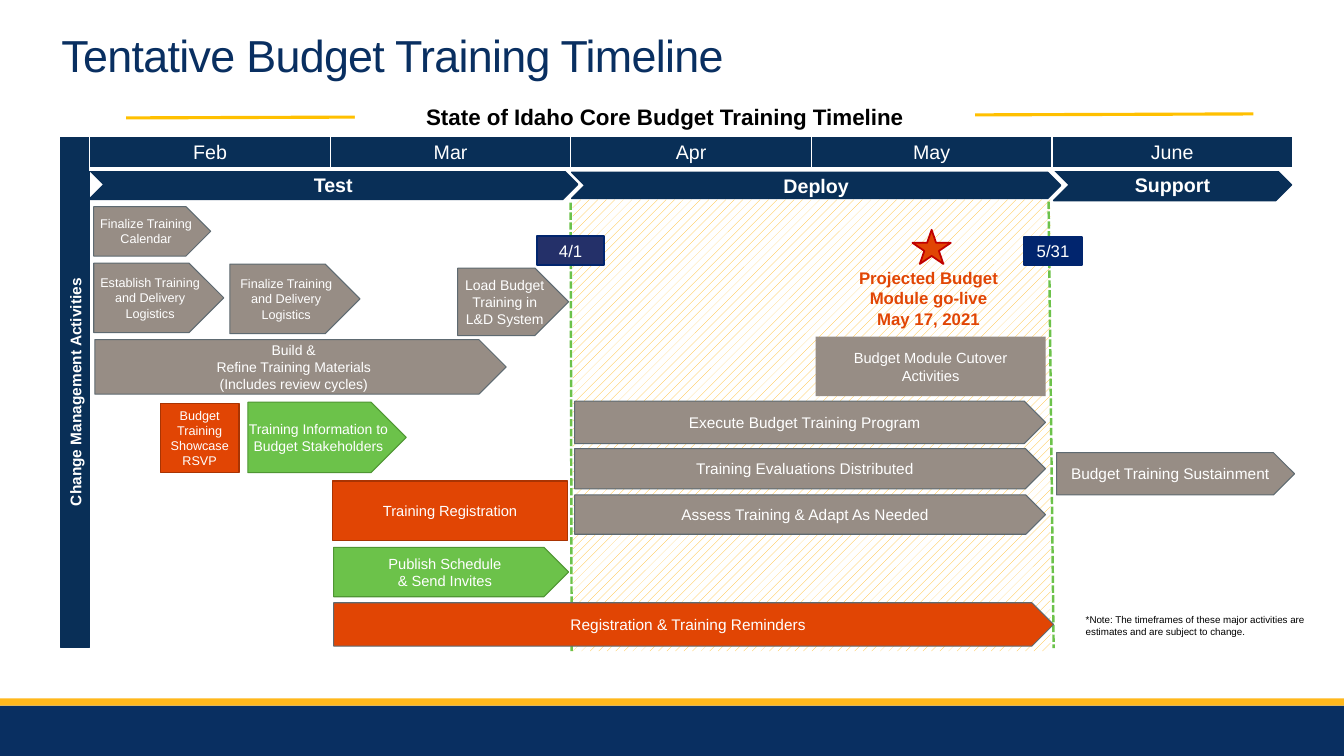
from lxml import etree
from pptx import Presentation
from pptx import util as u
from pptx.dml.color import RGBColor
from pptx.enum import dml, shapes, text
from pptx.oxml.ns import qn

SCALE = 9144
NAVY, DEEP, GOLD, WHITE = "092F57", "092F61", "FFB81C", "FFFFFF"
GREY, GREEN, RED, SLATE = "978D85", "6CC24A", "E14504", "5E6A71"
KIND = shapes.MSO_SHAPE
RECT, PLATE, CHEV, STAR = KIND.RECTANGLE, KIND.PENTAGON, KIND.CHEVRON, KIND.STAR_5_POINT
CENTER, LEFT = text.PP_ALIGN.CENTER, text.PP_ALIGN.LEFT
MID, TOP = text.MSO_ANCHOR.MIDDLE, text.MSO_ANCHOR.TOP


def px(*nums):
    return [u.Emu(round(n * SCALE)) for n in nums]


def tint(target, code):
    target.rgb = RGBColor.from_string(code)


def apply(target, values):
    for name, value in values.items():
        setattr(target, name, value)


def write(frame, words, size, color=WHITE, bold=False, align=CENTER,
          anchor=MID, side=0, edge=0, space=1):
    frame.auto_size = text.MSO_AUTO_SIZE.NONE
    sides, edges = px(side, edge)
    apply(frame, {"word_wrap": True, "vertical_anchor": anchor,
                  "margin_left": sides, "margin_right": sides,
                  "margin_top": edges, "margin_bottom": edges})
    frame.text = words
    for para in frame.paragraphs:
        apply(para, {"alignment": align, "line_spacing": space})
        for run in para.runs:
            apply(run.font, {"name": "Arial", "size": u.Pt(size), "bold": bold})
            tint(run.font.color, color)


def block(slide, kind, box, fill, line=None, width=0.75):
    shape = slide.shapes.add_shape(kind, *px(*box))
    shape.shadow.inherit = False
    shape.fill.solid()
    tint(shape.fill.fore_color, fill)
    if line:
        tint(shape.line.color, line)
        shape.line.width = u.Pt(width)
    else:
        shape.line.fill.background()
    return shape


def label(slide, box, words, size, **form):
    frame = slide.shapes.add_textbox(*px(*box)).text_frame
    write(frame, words, size, **form)


def rule(slide, ends, color, width, dash=None):
    line = slide.shapes.add_connector(shapes.MSO_CONNECTOR.STRAIGHT, *px(*ends))
    tint(line.line.color, color)
    apply(line.line, {"width": u.Pt(width), "dash_style": dash})
    etree.SubElement(line._element.spPr, qn("a:effectLst"))


def header(slide, box):
    x, y, w, h = box
    title = slide.shapes.title
    apply(title, dict(zip(("left", "top", "width", "height"), px(*box))))
    write(title.text_frame, "Tentative Budget Training Timeline", 32, color=DEEP,
          align=LEFT, anchor=TOP, side=10, edge=5, space=0.85)
    title.text_frame.paragraphs[0].runs[0]._r.get_or_add_rPr().set("spc", "-50")
    rule(slide, (x + 74, y + 86, x + 1192, y + 82), "FFC000", 2.25)
    band = block(slide, RECT, (x + 301, y + 73, 615, 26), WHITE)
    write(band.text_frame, "State of Idaho Core Budget Training Timeline", 16,
          color="000000", bold=True, side=7, space=0.95)


def border(cell, sides):
    props = cell._tc.get_or_add_tcPr()
    for at, (side, width) in enumerate(sides.items()):
        line = etree.Element(qn("a:" + side), w=str(int(u.Pt(width))))
        fill = etree.SubElement(line, qn("a:solidFill"))
        etree.SubElement(fill, qn("a:srgbClr"), val=WHITE)
        props.insert(at, line)


def months(slide, box):
    names = ["Feb", "Mar", "Apr", "May", "June"]
    table = slide.shapes.add_table(1, len(names), *px(*box)).table
    for col, name in enumerate(names):
        table.columns[col].width = px(box[2] / len(names))[0]
        cell = table.cell(0, col)
        cell.fill.solid()
        tint(cell.fill.fore_color, NAVY)
        write(cell.text_frame, name, 14)
        edges = px(4)[0]
        apply(cell, {"vertical_anchor": MID, "margin_top": edges, "margin_bottom": edges})
        border(cell, {"lnL": 1, "lnR": 1, "lnT": 1, "lnB": 3})


def phases(slide, box):
    x, y, w, h = box
    for name, dx, dy, wide, tall in (("Test", 0, 0, 485, 30),
                                     ("Deploy", 479, 3, 485, 26),
                                     ("Support", 957, 0, 236, 31)):
        shape = block(slide, CHEV, (x + dx, y + dy, wide, tall), NAVY, NAVY, 1)
        write(shape.text_frame, name, 14, bold=True)


def stripe(slide, box):
    x, y, w, h = box
    shape = block(slide, RECT, (x + (w - h) / 2, y + (h - w) / 2, h, w), NAVY, NAVY)
    shape.rotation = 270
    write(shape.text_frame, "Change Management Activities", 11, bold=True)


def window(slide, box):
    x, y, w, h = box
    shape = block(slide, RECT, (x + 2, y - 2, w - 5, h + 2), WHITE)
    shape.fill.patterned()
    shape.fill.pattern = dml.MSO_PATTERN.PERCENT_20
    tint(shape.fill.fore_color, GOLD)
    tint(shape.fill.back_color, WHITE)
    for ends in ((x, y + 1, x + 1, y + h), (x + w - 5, y, x + w, y + h - 3)):
        rule(slide, ends, GREEN, 1.75, dml.MSO_LINE.SQUARE_DOT)


def tasks(slide, box):
    x, y, w, h = box
    grey, green = (PLATE, GREY, SLATE, 0.75), (PLATE, GREEN, "4F9633", 0.75)
    red, bar = (RECT, RED, "A93403", 1), (PLATE, RED, SLATE, 0.75)
    plain = (RECT, GREY, None, 0)
    items = (
        (grey, 0, 5, 116, 49, "Finalize Training Calendar", 9),
        (grey, 0, 61, 129, 69, "Establish Training\nand Delivery Logistics", 9),
        (grey, 135, 62, 129, 69, "Finalize Training\nand Delivery Logistics", 9),
        (grey, 361, 66, 110, 67, "Load Budget Training in L&D System", 10),
        (grey, 1, 137, 408, 54,
         "Build &\nRefine Training Materials\n(Includes review cycles)", 10),
        (red, 66, 200, 78, 69, "Budget Training Showcase RSVP", 9),
        (green, 153, 199, 157, 70, "Training Information to Budget Stakeholders", 10),
        (red, 237, 277, 233, 59, "Training Registration", 10.5),
        (green, 238, 343, 233, 49, "Publish Schedule\n& Send Invites", 10.5),
        (bar, 238, 398, 714, 43, "Registration & Training Reminders", 11),
        (plain, 716, 134, 228, 59, "Budget Module Cutover Activities", 10.5),
        (grey, 477, 198, 467, 42, "Execute Budget Training Program", 11),
        (grey, 477, 245, 467, 40, "Training Evaluations Distributed", 11),
        (grey, 477, 291, 467, 39, "Assess Training & Adapt As Needed", 11),
        (grey, 955, 249, 236, 42, "Budget Training Sustainment", 11),
    )
    for (kind, fill, line, width), dx, dy, wide, tall, words, size in items:
        shape = block(slide, kind, (x + dx, y + dy, wide, tall), fill, line, width)
        write(shape.text_frame, words, size, side=9 if kind == RECT else 0)


def marks(slide, box):
    x, y, w, h = box
    for day, dx, dy, wide, tall, fill in (("4/1", 440, 34, 66, 29, "243069"),
                                          ("5/31", 923, 35, 57, 28, "01256E")):
        shape = block(slide, RECT, (x + dx, y + dy, wide, tall), fill, "01256E", 1.25)
        write(shape.text_frame, day, 12)
    block(slide, STAR, (x + 812, y + 28, 38, 34), RED, "C00000", 1.25)
    label(slide, (x + 748, y + 61, 160, 71),
          "Projected Budget Module go-live May 17, 2021", 12,
          color=RED, bold=True, anchor=TOP, side=5, edge=5)
    label(slide, (x + 974, y + 403, 238, 34),
          "*Note: The timeframes of these major activities are estimates "
          "and are subject to change.", 7,
          color="000000", align=LEFT, anchor=TOP, side=10, edge=5, space=1.06)


def footer(slide, box):
    x, y, w, h = box
    block(slide, RECT, (x, y + 7, w, h - 7), DEEP)
    block(slide, RECT, (x, y, w, 7), GOLD)


def main():
    deck = Presentation()
    deck.slide_width, deck.slide_height = px(1333, 750)
    slide = deck.slides.add_slide(deck.slide_layouts[5])
    plan = (93, 200, 1212, 446)
    footer(slide, (0, 693, 1333, 57))
    header(slide, (51, 31, 1169, 159))
    window(slide, (566, 200, 479, 446))
    phases(slide, (88, 168, 1193, 31))
    stripe(slide, (60, 136, 29, 506))
    tasks(slide, plan)
    months(slide, (89, 135, 1193, 33))
    marks(slide, plan)
    deck.save("out.pptx")


if __name__ == "__main__":
    main()
